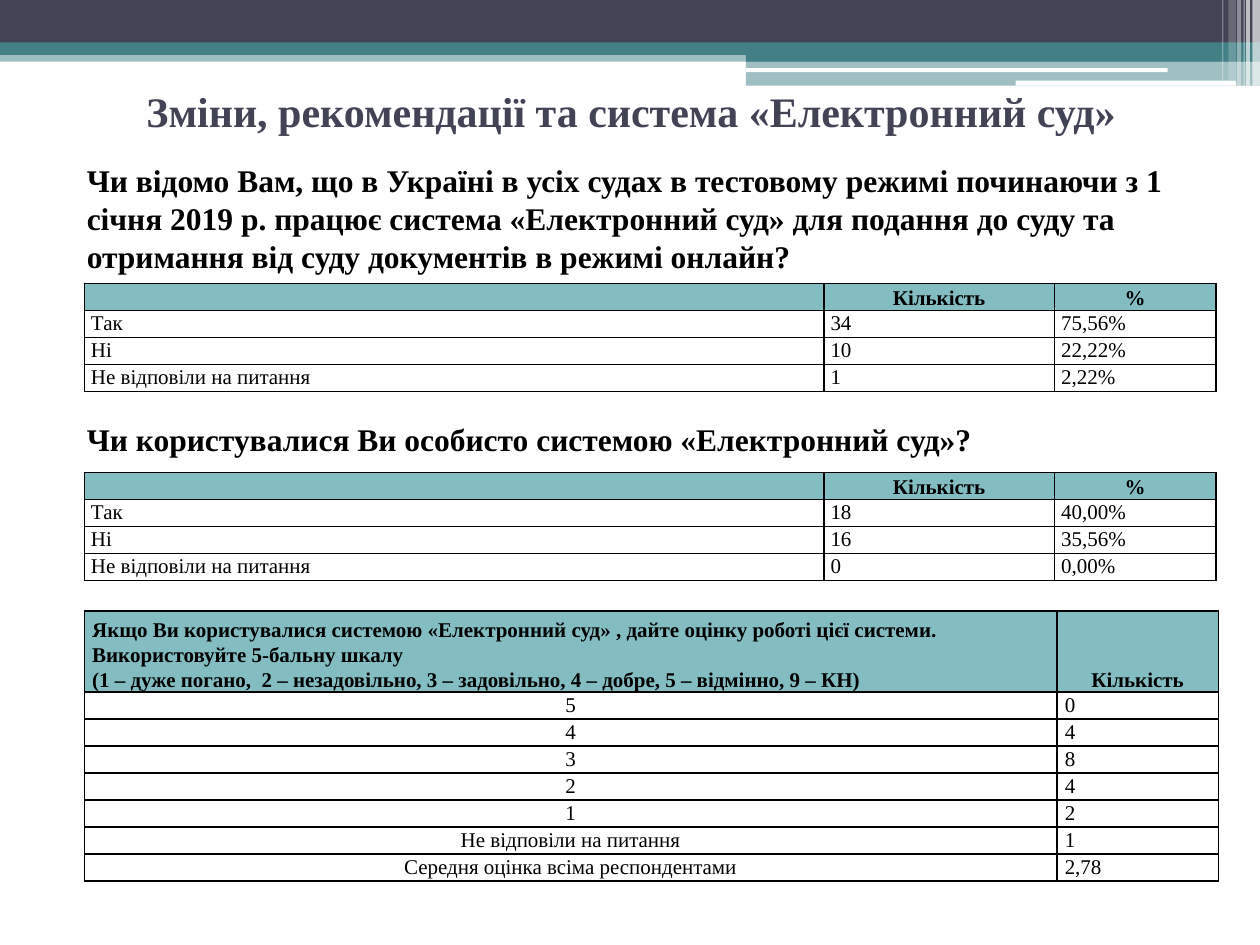
from lxml import etree
from pptx import Presentation
from pptx.dml.color import RGBColor
from pptx.enum.shapes import MSO_SHAPE
from pptx.enum.text import MSO_ANCHOR, PP_ALIGN
from pptx.oxml.ns import qn
from pptx.util import Pt

RECT, ROUND = MSO_SHAPE.RECTANGLE, MSO_SHAPE.ROUNDED_RECTANGLE
LEFT, CENTER = PP_ALIGN.LEFT, PP_ALIGN.CENTER
TOP, MIDDLE, BOTTOM = MSO_ANCHOR.TOP, MSO_ANCHOR.MIDDLE, MSO_ANCHOR.BOTTOM
TITLE_ONLY = 5
FONT = "Times New Roman"
ROW_HEIGHT = 15.4
COLORS = {"navy": "424456", "teal": "438086", "header": "83BCC1",
          "white": "FFFFFF", "black": "000000"}


def rgb(name):
    return RGBColor.from_string(COLORS[name])


def style_para(para, size, bold, color="black", align=LEFT):
    para.alignment = align
    for span in para.runs:
        span.font.name = FONT
        span.font.size = Pt(size)
        span.font.bold = bold
        span.font.color.rgb = rgb(color)


def add_bar(page, box, color, opacity=100, kind=RECT):
    bar = page.shapes.add_shape(kind, *map(Pt, box))
    bar.shadow.inherit = False
    bar.line.fill.background()
    bar.fill.solid()
    bar.fill.fore_color.rgb = rgb(color)
    if opacity < 100:
        color_node = bar.fill._xPr.find(qn("a:solidFill"))[0]
        etree.SubElement(color_node, qn("a:alpha"), val=str(opacity * 1000))


def add_banner(page, left, top, width):
    """Layered bands across the top, with fading stripes at the right end."""
    split = left + 0.592 * width
    right = left + width
    add_bar(page, (left, top + 28.8, width, 6.5), "teal", 50)
    add_bar(page, (left, top, width, 24.5), "navy")
    add_bar(page, (left, top + 24.2, width, 7.2), "teal")
    add_bar(page, (split, top + 28, right - split, 7.2), "teal")
    add_bar(page, (split, top + 34.6, right - split, 14.4), "teal", 50)
    add_bar(page, (split, top + 39, 241, 2.2), "white", kind=ROUND)
    add_bar(page, (right - 139.7, top + 46.1, 126, 2.9), "white", kind=ROUND)
    stripes = [(4.3, 4.3, 49, 65), (7.9, 2.2, 49, 65), (9.4, 0.7, 49, 60),
               (13, 2.2, 49, 40), (18, 4.3, 46, 20), (21.6, 0.7, 46, 30)]
    for offset, stripe_width, height, opacity in stripes:
        add_bar(page, (right - offset, top, stripe_width, height), "white", opacity)


def set_title(page, box, text):
    title = page.shapes.title
    title.left, title.top, title.width, title.height = map(Pt, box)
    title.text_frame.text = text
    title.text_frame.vertical_anchor = MIDDLE
    style_para(title.text_frame.paragraphs[0], 24, True, "navy", CENTER)


def add_question(page, box, text):
    frame = page.shapes.add_textbox(*map(Pt, box)).text_frame
    frame.word_wrap = True
    frame.text = text
    style_para(frame.paragraphs[0], 18, True)


def add_borders(cell):
    props = cell._tc.get_or_add_tcPr()
    for side in ("lnL", "lnR", "lnT", "lnB"):
        line = etree.SubElement(props, qn("a:" + side), w=str(Pt(1)))
        fill = etree.SubElement(line, qn("a:solidFill"))
        etree.SubElement(fill, qn("a:srgbClr"), val=COLORS["black"])


def fill_cell(cell, text, align, is_header, inset):
    add_borders(cell)
    cell.margin_left = cell.margin_right = Pt(inset)
    cell.margin_top = cell.margin_bottom = 0
    cell.vertical_anchor = BOTTOM if is_header else TOP
    if is_header:
        cell.fill.solid()
        cell.fill.fore_color.rgb = rgb("header")
    else:
        cell.fill.background()
    para = cell.text_frame.paragraphs[0]
    para.text = text
    para.line_spacing = 1.07
    style_para(para, 12, is_header, align=align)
    if not text:
        # An empty cell needs its own size, or it stretches the row.
        etree.SubElement(para._p, qn("a:endParaRPr"), sz="1200")


def add_grid(page, left, top, widths, rows, header_aligns, body_aligns,
             header_height=ROW_HEIGHT, inset=3.8):
    heights = [header_height] + [ROW_HEIGHT] * (len(rows) - 1)
    box = (left, top, sum(widths), sum(heights))
    table = page.shapes.add_table(len(rows), len(widths), *map(Pt, box)).table
    table.first_row = table.horz_banding = False
    for column, width in zip(table.columns, widths):
        column.width = Pt(width)
    for index, (row, height, texts) in enumerate(zip(table.rows, heights, rows)):
        row.height = Pt(height)
        aligns = body_aligns if index else header_aligns
        for cell, text, align in zip(row.cells, texts, aligns):
            fill_cell(cell, text, align, index == 0, inset)


def add_answers(page, left, top, answers):
    labels = ("Так", "Ні", "Не відповіли на питання")
    rows = [("", "Кількість", "%")]
    rows += [(label, *values) for label, values in zip(labels, answers)]
    add_grid(page, left, top, (422.6, 131.8, 92.2), rows, [CENTER] * 3, [LEFT] * 3)


def add_ratings(page, left, top):
    rows = [("Якщо Ви користувалися системою «Електронний суд» , дайте оцінку "
             "роботі цієї системи. Використовуйте 5-бальну шкалу\v"
             "(1 – дуже погано,  2 – незадовільно, 3 – задовільно, 4 – добре, "
             "5 – відмінно, 9 – КН)", "Кількість"),
            ("5", "0"), ("4", "4"), ("3", "8"), ("2", "4"), ("1", "2"),
            ("Не відповіли на питання", "1"),
            ("Середня оцінка всіма респондентами", "2,78")]
    add_grid(page, left, top, (555.8, 92.2), rows, (LEFT, CENTER), (CENTER, LEFT),
             header_height=46.3, inset=4.5)


def main():
    deck = Presentation()
    deck.slide_width, deck.slide_height = Pt(720), Pt(540)
    page = deck.slides.add_slide(deck.slide_layouts[TITLE_ONLY])
    add_banner(page, 0, 0, 720)
    set_title(page, (36.7, 20.9, 648, 84.2),
              "Зміни, рекомендації та система «Електронний суд»")
    add_question(page, (42.5, 88.6, 668.9, 72.7),
                 "Чи відомо Вам, що в Україні в усіх судах в тестовому режимі "
                 "починаючи з 1 січня 2019 р. працює система «Електронний суд» "
                 "для подання до суду та отримання від суду документів в режимі "
                 "онлайн?")
    add_answers(page, 48.2, 162,
                [("34", "75,56%"), ("10", "22,22%"), ("1", "2,22%")])
    add_question(page, (42.5, 236.2, 646.6, 28.8),
                 "Чи користувалися Ви особисто системою «Електронний суд»?")
    add_answers(page, 48.2, 270,
                [("18", "40,00%"), ("16", "35,56%"), ("0", "0,00%")])
    add_ratings(page, 48.2, 349.2)
    deck.save("out.pptx")


if __name__ == "__main__":
    main()
